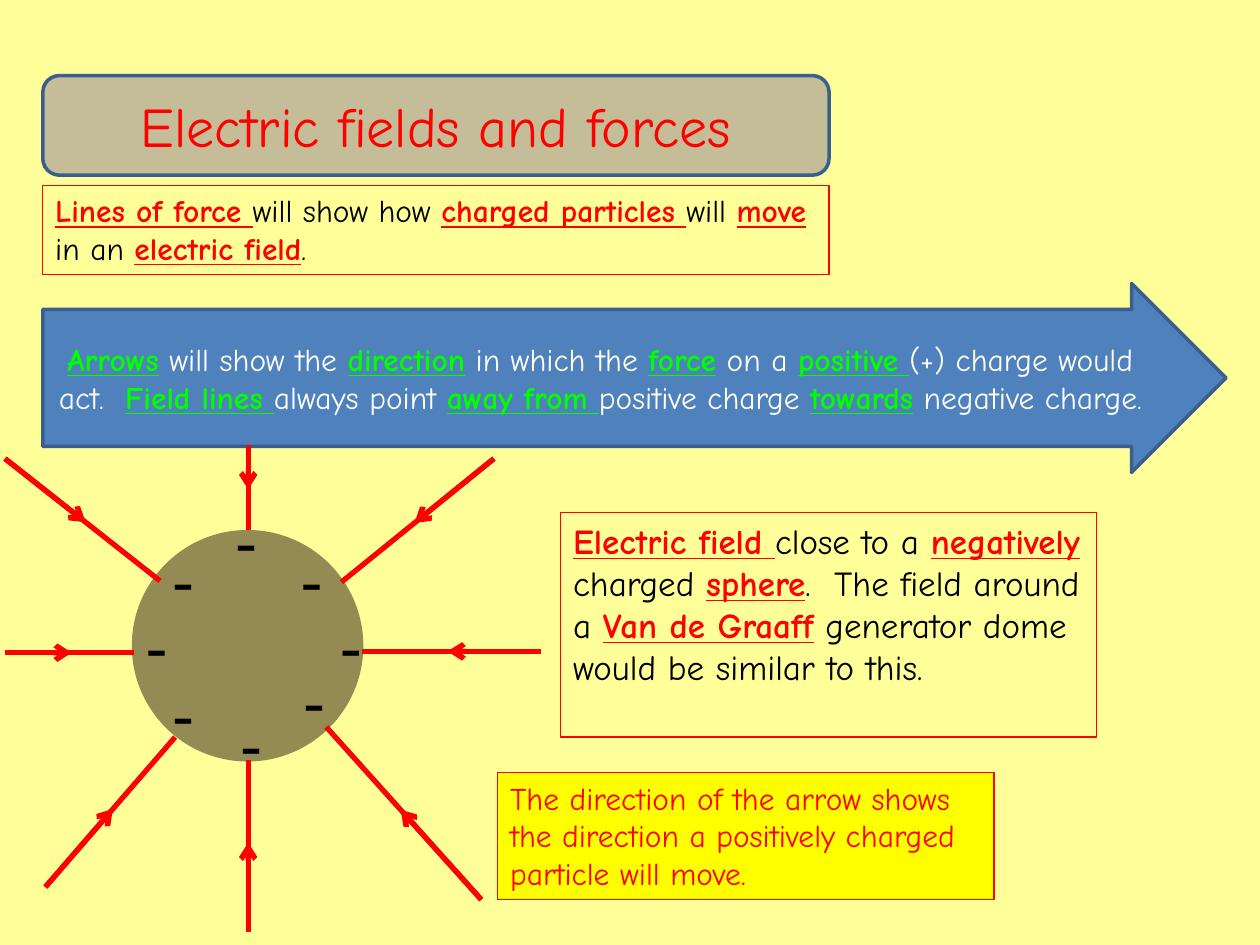
from lxml import etree
from pptx import Presentation
from pptx.dml.color import RGBColor
from pptx.enum import shapes, text
from pptx.oxml.ns import qn
from pptx.util import Inches, Pt

RED, BLACK, WHITE, GREEN = "FF0000", "000000", "FFFFFF", "00FF00"
YELLOW, BLUE, BLUE_EDGE = "FFFF00", "4F81BD", "3A5F8C"
TAN, OLIVE, PALE = "C4BD97", "948A54", "FFFF99"
FONT = "Comic Neue"

# Key words stand between asterisks.
TITLE = "Electric fields and forces"
LINES = ("*Lines of force *will show how *charged particles *will *move*"
         " in an *electric field*.")
ARROWS = ("*Arrows* will show the *direction* in which the *force* on a *positive *"
          "(+) charge would act.  *Field lines *always point *away from *"
          "positive charge *towards* negative charge")
SPHERE = ("*Electric field *close to a *negatively* charged *sphere*.  The field around a "
          "*Van de Graaff* generator dome would be similar to this.")
DIRECTION = ("The direction of the arrow shows the direction a positively charged "
             "particle will move.")

MINUS_SIGNS = [(1.77, 3.91), (1.27, 4.22), (1.06, 4.74), (2.29, 4.22),
               (1.81, 5.52), (2.6, 4.74), (2.31, 5.18), (1.27, 5.28)]
FIELD_LINES = [  # outer end, end on the sphere
    ((0.04, 3.64), (1.27, 4.61)), ((0.04, 5.18), (1.06, 5.18)),
    ((0.36, 7.04), (1.39, 5.85)), ((1.97, 7.4), (1.97, 6.03)),
    ((3.82, 7.14), (2.59, 5.77)), ((4.29, 5.17), (2.87, 5.17)),
    ((3.92, 3.64), (2.71, 4.62)), ((1.97, 3.53), (1.97, 4.21)),
]
HEAD_AT = 0.52  # share of a field line that lies before its arrowhead

prs = Presentation()
prs.slide_width, prs.slide_height = Inches(10), Inches(7.5)
s = prs.slides.add_slide(prs.slide_layouts[6])


def rgb(color):
    return RGBColor.from_string(color)


s.background.fill.solid()
s.background.fill.fore_color.rgb = rgb(PALE)


def add_shape(kind, box, fill, line, width):
    sp = s.shapes.add_shape(kind, *map(Inches, box))
    sp.shadow.inherit = False
    if fill:
        sp.fill.solid()
        sp.fill.fore_color.rgb = rgb(fill)
    else:
        sp.fill.background()
    sp.line.color.rgb = rgb(line)
    sp.line.width = Pt(width)
    return sp


def add_run(p, words, color, key=False):
    r = p.add_run()
    r.text = words
    r.font.color.rgb = rgb(color)
    r.font.bold = r.font.underline = key
    return r


def write(sp, marked, size, color, key_color=RED, centred=False):
    """Fill the shape with text, setting the words between asterisks as key words."""
    tf = sp.text_frame
    tf.word_wrap = True
    tf.vertical_anchor = text.MSO_ANCHOR.MIDDLE if centred else text.MSO_ANCHOR.TOP
    p = tf.paragraphs[0]
    p.alignment = text.PP_ALIGN.CENTER if centred else text.PP_ALIGN.LEFT
    p.font.name, p.font.size = FONT, Pt(size)
    for i, words in enumerate(marked.split("*")):
        if words:
            key = i % 2 == 1
            r = add_run(p, words, key_color if key else color, key)
            r.font.name, r.font.size = FONT, Pt(size)
    return p


def add_line(start, end, arrow=False):
    c = s.shapes.add_connector(shapes.MSO_CONNECTOR.STRAIGHT, *map(Inches, start + end))
    c.line.color.rgb = rgb(RED)
    c.line.width = Pt(3)
    if arrow:
        etree.SubElement(c.line._get_or_add_ln(), qn("a:tailEnd"), type="arrow")
    etree.SubElement(c._element.spPr, qn("a:effectLst"))


KIND = shapes.MSO_SHAPE

title = add_shape(KIND.ROUNDED_RECTANGLE, (0.34, 0.6, 6.24, 0.79), TAN, BLUE_EDGE, 2)
write(title, TITLE, 32, RED, centred=True)

lines_box = add_shape(KIND.RECTANGLE, (0.34, 1.47, 6.24, 0.71), None, RED, 0.75)
write(lines_box, LINES, 18, BLACK)

banner = add_shape(KIND.RIGHT_ARROW, (0.34, 2.25, 9.39, 1.5), BLUE, BLUE_EDGE, 2)
banner.adjustments[0] = 0.725
p = write(banner, ARROWS, 18, WHITE, GREEN, centred=True)
stop = add_run(p, ".", WHITE)
stop.font.name, stop.font.size = FONT, Pt(16)

add_shape(KIND.OVAL, (1.06, 4.22, 1.81, 1.81), OLIVE, OLIVE, 2)
for left, top in MINUS_SIGNS:
    tb = s.shapes.add_textbox(*map(Inches, (left, top, 0.31, 0.77)))
    tb.text_frame.word_wrap = True
    p = tb.text_frame.paragraphs[0]
    p.text = "-"
    p.font.name, p.font.size = "Calibri", Pt(40)
    p.font.color.rgb = rgb(BLACK)

for outer, inner in FIELD_LINES:
    head = tuple(a + HEAD_AT * (b - a) for a, b in zip(outer, inner))
    add_line(outer, inner)
    add_line(outer, head, arrow=True)

sphere_box = add_shape(KIND.RECTANGLE, (4.45, 4.07, 4.25, 1.78), None, RED, 0.75)
write(sphere_box, SPHERE, 20, BLACK)

direction_box = add_shape(KIND.RECTANGLE, (3.95, 6.13, 3.94, 1.01), YELLOW, RED, 0.75)
write(direction_box, DIRECTION, 18, RED)

prs.save("out.pptx")
